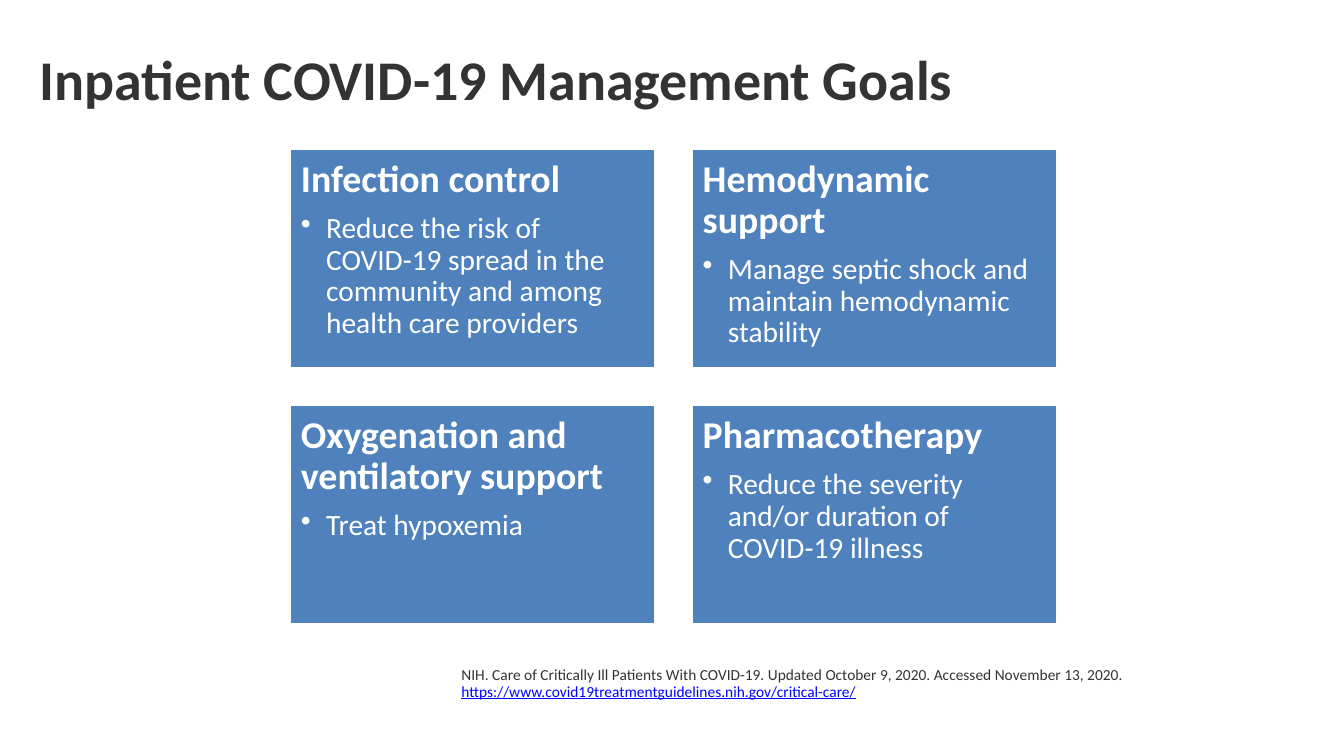
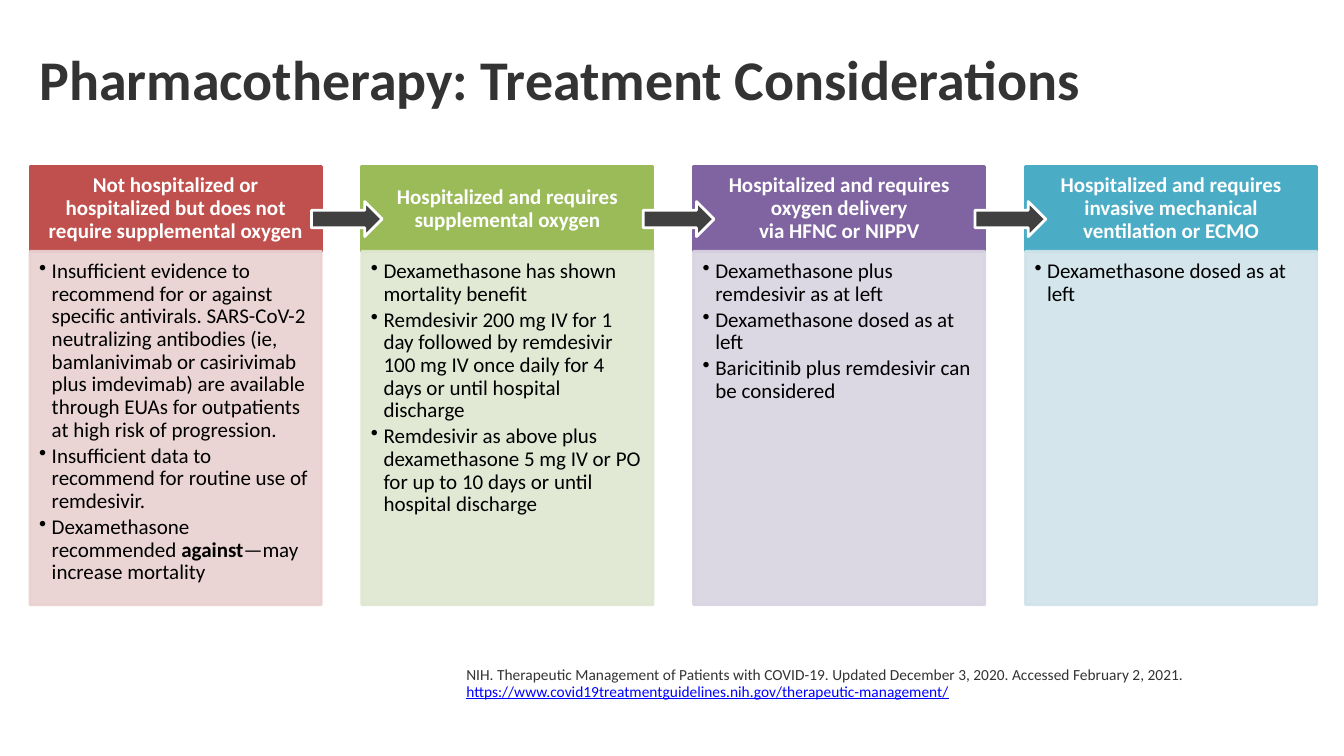
from lxml.etree import SubElement
from pptx import Presentation
from pptx.dml.color import RGBColor as RGB
from pptx.enum.shapes import MSO_SHAPE as SHAPE
from pptx.enum.text import MSO_ANCHOR as ANCHOR, PP_ALIGN as ALIGN
from pptx.oxml.ns import qn
from pptx.util import Pt

FONT = "Calibri"
INK = RGB(0x33, 0x33, 0x33)
BLACK = RGB(0, 0, 0)
WHITE = RGB(0xFF, 0xFF, 0xFF)
LINK = RGB(0, 0, 0xFF)
BLUE = RGB(0x4F, 0x81, 0xBD)
GRAY = RGB(0x40, 0x40, 0x40)
RED, ROSE = RGB(0xC0, 0x50, 0x4D), RGB(0xE8, 0xD0, 0xD0)
GREEN, MINT = RGB(0x9B, 0xBB, 0x59), RGB(0xDE, 0xE7, 0xD1)
PLUM, LILAC = RGB(0x80, 0x64, 0xA2), RGB(0xD8, 0xD3, 0xE0)
TEAL, SKY = RGB(0x4B, 0xAC, 0xC6), RGB(0xD0, 0xE3, 0xEA)


def block(slide, kind, spot, fill, line, inset=(0, 0, 0, 0), anchor=ANCHOR.TOP):
    """Add a filled shape; spot is left, top, width, height in points."""
    shape = slide.shapes.add_shape(kind, *map(Pt, spot))
    shape.shadow.inherit = False
    shape.fill.solid()
    shape.fill.fore_color.rgb = fill
    shape.line.color.rgb = line
    shape.line.width = Pt(2)
    frame = shape.text_frame
    frame.vertical_anchor = anchor
    frame.margin_left, frame.margin_top, frame.margin_right, frame.margin_bottom = map(Pt, inset)
    return shape


def write(frame, text, size, color, bold=False, align=ALIGN.LEFT, after=0, indent=0):
    """Add a paragraph, bulleted if indented; words between asterisks are bold."""
    frame.word_wrap = True
    para = frame.paragraphs[0] if not frame.text else frame.add_paragraph()
    parts = text.split("*")
    para.text = parts[0]
    for i, part in enumerate(parts[1:], 1):
        run = para.add_run()
        run.text = part
        if i % 2:
            run.font.bold = True
    para.alignment = align
    para.line_spacing = 0.9
    para.space_after = Pt(after)
    if indent:
        props = para._p.get_or_add_pPr()
        props.set("marL", str(Pt(indent)))
        props.set("indent", str(-Pt(indent)))
        SubElement(props, qn("a:buChar")).set("char", "•")
    font = para.font
    font.name, font.size, font.bold = FONT, Pt(size), bold
    font.color.rgb = color
    return para


deck = Presentation()
deck.slide_width, deck.slide_height = Pt(960), Pt(540)

# Titles and sources
PAGES = [
    ("Inpatient COVID-19 Management Goals", 322.5,
     "NIH. Care of Critically Ill Patients With COVID-19. Updated October 9, 2020. Accessed November 13, 2020. ",
     "https://www.covid19treatmentguidelines.nih.gov/critical-care/"),
    ("Pharmacotherapy: Treatment Considerations", 326,
     "NIH. Therapeutic Management of Patients with COVID-19. Updated December 3, 2020. Accessed February 2, 2021. ",
     "https://www.covid19treatmentguidelines.nih.gov/therapeutic-management/"),
]
RIGHT = 940.5
slides = []
for title, left, source, url in PAGES:
    slide = deck.slides.add_slide(deck.slide_layouts[6])
    head = slide.shapes.add_textbox(Pt(21), Pt(13.5), Pt(920), Pt(90)).text_frame
    head.vertical_anchor = ANCHOR.MIDDLE
    write(head, title, 40, INK, bold=True)
    foot = slide.shapes.add_textbox(Pt(left), Pt(473), Pt(RIGHT - left), Pt(57.5)).text_frame
    link = write(foot, source, 11, INK).add_run()
    link.text = url
    link.font.color.rgb = LINK
    link.font.underline = True
    slides.append(slide)
goals, care = slides

# Goal cards, two by two
GOALS = [
    ("Infection control",
     "Reduce the risk of COVID-19 spread in the community and among health care providers"),
    ("Hemodynamic support", "Manage septic shock and maintain hemodynamic stability"),
    ("Oxygenation and ventilatory support", "Treat hypoxemia"),
    ("Pharmacotherapy", "Reduce the severity and/or duration of COVID-19 illness"),
]
for i, (name, aim) in enumerate(GOALS):
    row, col = divmod(i, 2)
    spot = (207 + 287 * col, 106 + 183 * row, 261, 157)
    frame = block(goals, SHAPE.RECTANGLE, spot, BLUE, WHITE, (8, 8, 8, 8)).text_frame
    write(frame, name, 27, WHITE, bold=True, after=9)
    write(frame, aim, 21, WHITE, after=3, indent=18)

# Treatment columns by level of care
STAGES = [
    ("Not hospitalized or hospitalized but does not require supplemental oxygen", RED, ROSE, [
        "Insufficient evidence to recommend for or against specific antivirals. "
        "SARS-CoV-2 neutralizing antibodies (ie, bamlanivimab or casirivimab plus imdevimab) "
        "are available through EUAs for outpatients at high risk of progression.",
        "Insufficient data to recommend for routine use of remdesivir.",
        "Dexamethasone recommended *against*—may increase mortality"]),
    ("Hospitalized and requires supplemental oxygen", GREEN, MINT, [
        "Dexamethasone has shown mortality benefit",
        "Remdesivir 200 mg IV for 1 day followed by remdesivir 100 mg IV once daily "
        "for 4 days or until hospital discharge",
        "Remdesivir as above plus dexamethasone 5 mg IV or PO for up to 10 days "
        "or until hospital discharge"]),
    ("Hospitalized and requires oxygen delivery\vvia HFNC or NIPPV", PLUM, LILAC, [
        "Dexamethasone plus remdesivir as at left",
        "Dexamethasone dosed as at left",
        "Baricitinib plus remdesivir can be considered"]),
    ("Hospitalized and requires invasive mechanical ventilation or ECMO", TEAL, SKY, [
        "Dexamethasone dosed as at left"]),
]
STEP = 237
for i, (name, dark, pale, notes) in enumerate(STAGES):
    left = 21.5 + STEP * i
    top = block(care, SHAPE.RECTANGLE, (left, 119, 208, 60.5), dark, dark,
                (8.5, 5, 8.5, 5), ANCHOR.MIDDLE)
    write(top.text_frame, name, 15, WHITE, bold=True, align=ALIGN.CENTER)
    body = block(care, SHAPE.RECTANGLE, (left, 179.5, 208, 252.5), pale, pale,
                 (6.5, 6.5, 8.5, 9))
    for tint in body._element.spPr.iter(qn("a:srgbClr")):
        SubElement(tint, qn("a:alpha")).set("val", "90000")
    for note in notes:
        write(body.text_frame, note, 15, BLACK, after=2.3, indent=9)

for i in range(len(STAGES) - 1):
    block(care, SHAPE.RIGHT_ARROW, (222.5 + STEP * i, 144, 50.5, 25), GRAY, WHITE)

deck.save("out.pptx")
